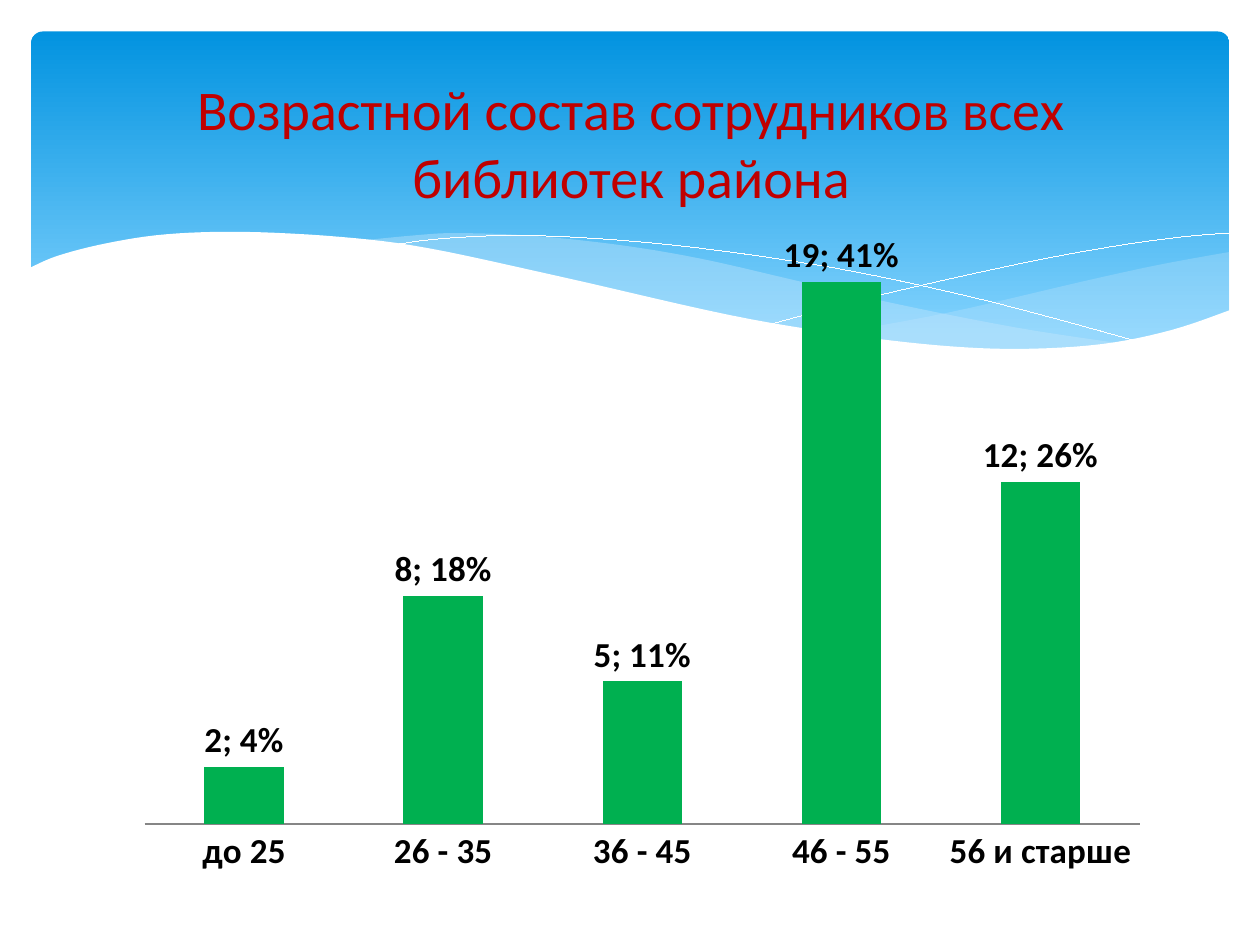
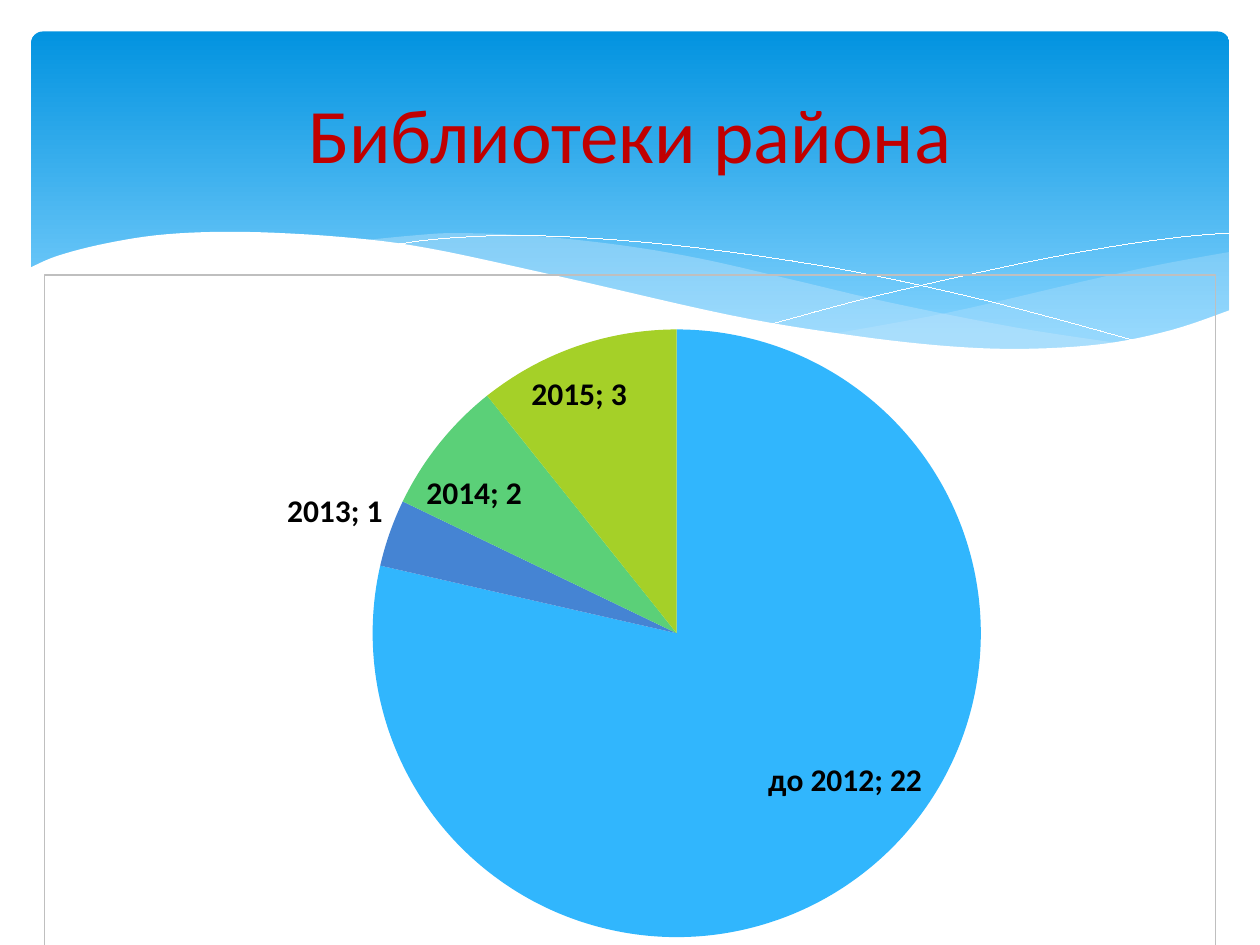
from dataclasses import dataclass

from lxml import etree
from pptx import Presentation
from pptx.chart.data import CategoryChartData
from pptx.dml.color import RGBColor
from pptx.enum.chart import XL_CHART_TYPE, XL_LABEL_POSITION, XL_TICK_LABEL_POSITION, XL_TICK_MARK
from pptx.enum.shapes import MSO_SHAPE
from pptx.enum.text import MSO_ANCHOR, PP_ALIGN
from pptx.oxml import parse_xml
from pptx.oxml.ns import nsdecls, qn
from pptx.util import Pt

COLUMN, PIE = XL_CHART_TYPE.COLUMN_CLUSTERED, XL_CHART_TYPE.PIE
OUTSIDE, BEST_FIT = XL_LABEL_POSITION.OUTSIDE_END, XL_LABEL_POSITION.BEST_FIT
NEXT_TO_AXIS, NO_TICK = XL_TICK_LABEL_POSITION.NEXT_TO_AXIS, XL_TICK_MARK.NONE
ROUNDED = MSO_SHAPE.ROUNDED_RECTANGLE
MIDDLE, CENTER = MSO_ANCHOR.MIDDLE, PP_ALIGN.CENTER


@dataclass(frozen=True)
class Theme:
    font: str = "Calibri"
    title: str = "C00000"
    text: str = "000000"
    white: str = "FFFFFF"
    band_top: str = "0293E0"
    band_bottom: str = "83D3FE"
    wave: str = "C6E7FC"
    bar: str = "00B050"
    axis: str = "868686"
    border: str = "BFBFBF"
    slices: tuple = ("31B6FD", "4584D3", "5BD078", "A5D028")
    long_title_size: int = 32
    title_size: int = 44
    label_size: int = 20
    chart_size: int = 18


THEME = Theme()
HAIRLINE = Pt(0.01)

# Boxes: left, top, width, height in points
BAND_BOX = (17.8, 18, 684.72, 194.4)
AGE_TITLE_BOX = (36.7, 31.9, 648, 98.6)
AGE_CHART_BOX = (70.8, 133.5, 592.56, 370.8)
LIBRARY_TITLE_BOX = (36, 26.64, 648, 98.6)
LIBRARY_CHART_BOX = (25.2, 156.7, 669.6, 390.96)

# Knots of the wave edges, relative to the band's corner
RIGHT_WAVE = (
    [(684.7, 126), (645, 133.2), (602, 142.6), (524.2, 160.6), (458, 172.8)],
    [(458, 172.8), (499.7, 177.8), (535.7, 181.4), (575.3, 181.4), (609.8, 179.3),
     (645, 172.8), (684.7, 159.8)],
)
LONG_WAVE = (
    [(188, 119.5), (218, 116.6), (242, 115.2), (284.4, 116.6), (334, 121.7), (381.6, 129.6),
     (434.9, 141.8), (490.3, 154.8), (563, 169.2), (625, 178.6)],
    [(625, 178.6), (592.6, 181.6), (555, 182.2), (512, 180), (460.8, 173.5), (402.5, 163.4),
     (305.3, 141.8), (242.6, 128.2), (188, 119.5)],
)
FALLING_LINE = ([(204.5, 122.4), (229.7, 118.8), (270.7, 116.6), (319.7, 118.1), (382.3, 123.8),
                 (460.8, 135.4), (529.2, 149.8), (580.3, 162.7), (635, 177.8)],)
RISING_LINE = ([(423.4, 167), (482.4, 151.2), (562.3, 133.2), (616.3, 123.1), (657.4, 117.4),
                (684, 115.2)],)
WHITE_WAVE = (
    [(685.4, 159.1), (651.6, 170.6), (612, 178.6), (564.5, 181.4), (517.7, 179.3), (463, 172.8),
     (398.9, 162), (303.8, 140.4), (226.8, 123.8), (177, 117.4), (121, 114.5), (77, 115.9),
     (43.2, 121), (15.1, 128.2), (-1.4, 135.4)],
    [(-1.4, 218.9), (685.4, 218.9)],
)


def rgb(value):
    return RGBColor.from_string(value)


def points(box):
    return [Pt(length) for length in box]


def set_font(font, size, color=THEME.text, bold=False):
    font.name, font.size, font.bold = THEME.font, Pt(size), bold
    font.color.rgb = rgb(color)


def put_text(frame, text, size, color=THEME.text, bold=False, align=CENTER):
    para = frame.paragraphs[0]
    para.alignment = align
    span = para.add_run()
    span.text = text
    set_font(span.font, size, color, bold)


def put_title(page, box, text, size):
    title = page.shapes.title
    title.left, title.top, title.width, title.height = points(box)
    title.text_frame.vertical_anchor = MIDDLE
    put_text(title.text_frame, text, size, THEME.title)


# Shared band with its waves
def smooth(knots, steps=6):
    """Catmull-Rom curve through the knots; two knots stay a straight line."""
    if len(knots) == 2:
        return knots
    padded = [knots[0], *knots, knots[-1]]
    curve = [knots[0]]
    for a, b, c, d in zip(padded, padded[1:], padded[2:], padded[3:]):
        for step in range(1, steps + 1):
            t = step / steps
            curve.append(tuple(
                (2 * q + (r - p) * t + (2 * p - 5 * q + 4 * r - s) * t ** 2
                 + (3 * q - p - 3 * r + s) * t ** 3) / 2
                for p, q, r, s in zip(a, b, c, d)))
    return curve


def add_wave(page, box, edges, fill=None, opacity=100):
    outline = [(Pt(box[0] + x), Pt(box[1] + y)) for edge in edges for x, y in smooth(edge)]
    builder = page.shapes.build_freeform(*outline[0])
    builder.add_line_segments(outline[1:], close=fill is not None)
    wave = builder.convert_to_shape()
    wave.shadow.inherit = False
    if fill is None:
        wave.fill.background()
        wave.line.color.rgb = rgb(THEME.white)
        wave.line.width = HAIRLINE
        return wave
    wave.fill.solid()
    wave.fill.fore_color.rgb = rgb(fill)
    wave.line.fill.background()
    if opacity < 100:
        color = wave.element.spPr.find(qn("a:solidFill"))[0]
        etree.SubElement(color, qn("a:alpha")).set("val", str(opacity * 1000))
    return wave


def add_band(page, box):
    band = page.shapes.add_shape(ROUNDED, *points(box))
    band.adjustments[0] = 0.034
    band.shadow.inherit = False
    band.line.fill.background()
    band.fill.gradient()
    band.fill.gradient_angle = 270
    stops = band.fill.gradient_stops
    for stop, color, position in zip(stops, (THEME.band_top, THEME.band_bottom), (0, 0.9)):
        stop.color.rgb = rgb(color)
        stop.position = position
    return [
        band,
        add_wave(page, box, RIGHT_WAVE, THEME.wave, 29),
        add_wave(page, box, LONG_WAVE, THEME.wave, 40),
        add_wave(page, box, FALLING_LINE),
        add_wave(page, box, RISING_LINE),
        add_wave(page, box, WHITE_WAVE, THEME.white),
    ]


def move_to_layout(shapes, layout):
    """Put the shapes behind everything on the layout, so that all its slides share them."""
    for index, shape in enumerate(shapes):
        shape.element.xpath(".//p:cNvPr")[0].set("id", str(100 + index))
        layout.shapes.element.insert(2 + index, shape.element)


# Charts
def add_chart(page, box, kind, values, plot_area, bold=False, border=None):
    """Add a see-through chart; plot_area is x, y, w, h as parts of the chart."""
    data = CategoryChartData()
    data.categories = list(values)
    data.add_series("Series 1", list(values.values()))
    chart = page.shapes.add_chart(kind, *points(box), data).chart
    chart.has_title = chart.has_legend = False
    set_font(chart.font, THEME.chart_size, bold=bold)

    line = f'<a:solidFill><a:srgbClr val="{border}"/></a:solidFill>' if border else "<a:noFill/>"
    chart_space = chart.element
    chart_space.find(qn("c:chart")).addnext(parse_xml(
        f'<c:spPr {nsdecls("c", "a")}><a:noFill/><a:ln w="{Pt(0.75)}">{line}</a:ln></c:spPr>'))

    area = chart_space.find(qn("c:chart")).find(qn("c:plotArea"))
    for layout in area.findall(qn("c:layout")):
        area.remove(layout)
    sizes = "".join(f'<c:{name} val="{part}"/>' for name, part in zip("xywh", plot_area))
    area.insert(0, parse_xml(
        f'<c:layout {nsdecls("c")}><c:manualLayout><c:layoutTarget val="inner"/>'
        f'<c:xMode val="edge"/><c:yMode val="edge"/>{sizes}</c:manualLayout></c:layout>'))
    return chart


def add_age_chart(page, box, staff, shares):
    chart = add_chart(page, box, COLUMN, staff, (0.02, 0.03, 0.96, 0.88))
    plot = chart.plots[0]
    plot.gap_width, plot.overlap, plot.vary_by_categories = 150, -25, False

    ages, counts = chart.category_axis, chart.value_axis
    ages.major_tick_mark = ages.minor_tick_mark = NO_TICK
    ages.tick_label_position = NEXT_TO_AXIS
    ages.format.line.color.rgb = rgb(THEME.axis)
    ages.format.line.width = Pt(0.75)
    set_font(ages.tick_labels.font, THEME.label_size, bold=True)
    counts.visible = counts.has_major_gridlines = False
    counts.minimum_scale, counts.maximum_scale = 0, 20

    series = plot.series[0]
    series.format.fill.solid()
    series.format.fill.fore_color.rgb = rgb(THEME.bar)
    series.data_labels.show_value = True
    series.data_labels.position = OUTSIDE
    set_font(series.data_labels.font, THEME.label_size, bold=True)
    for index, (count, share) in enumerate(zip(staff.values(), shares)):
        label = series.points[index].data_label
        put_text(label.text_frame, f"{count}; {share}%", THEME.label_size, bold=True)
        label.position = OUTSIDE


def add_library_chart(page, box, libraries):
    chart = add_chart(page, box, PIE, libraries, (0.28, 0.08, 0.52, 0.89),
                      bold=True, border=THEME.border)
    plot = chart.plots[0]
    series = plot.series[0]
    for index, color in enumerate(THEME.slices):
        fill = series.points[index].format.fill
        fill.solid()
        fill.fore_color.rgb = rgb(color)

    labels = series.data_labels
    labels.show_category_name = labels.show_value = True
    labels.show_percentage = False
    labels.position = BEST_FIT
    set_font(labels.font, THEME.chart_size, bold=True)
    separator = parse_xml(f'<c:separator {nsdecls("c")}>; </c:separator>')
    chart.element.xpath(".//c:ser/c:dLbls/c:showBubbleSize")[0].addnext(separator)


# Slides
def age_slide(page):
    put_title(page, AGE_TITLE_BOX, "Возрастной состав сотрудников всех библиотек района",
              THEME.long_title_size)
    staff = {"до 25": 2, "26 - 35": 8, "36 - 45": 5, "46 - 55": 19, "56 и старше": 12}
    add_age_chart(page, AGE_CHART_BOX, staff, (4, 18, 11, 41, 26))


def library_slide(page):
    put_title(page, LIBRARY_TITLE_BOX, "Библиотеки района", THEME.title_size)
    libraries = {"до 2012": 22, "2013": 1, "2014": 2, "2015": 3}
    add_library_chart(page, LIBRARY_CHART_BOX, libraries)


def main():
    deck = Presentation()
    deck.slide_width, deck.slide_height = Pt(720), Pt(540)
    title_only = deck.slide_layouts[5]
    pages = [deck.slides.add_slide(title_only) for _ in range(2)]
    move_to_layout(add_band(pages[0], BAND_BOX), title_only)
    for build, page in zip((age_slide, library_slide), pages):
        build(page)
    deck.save("out.pptx")


if __name__ == "__main__":
    main()
